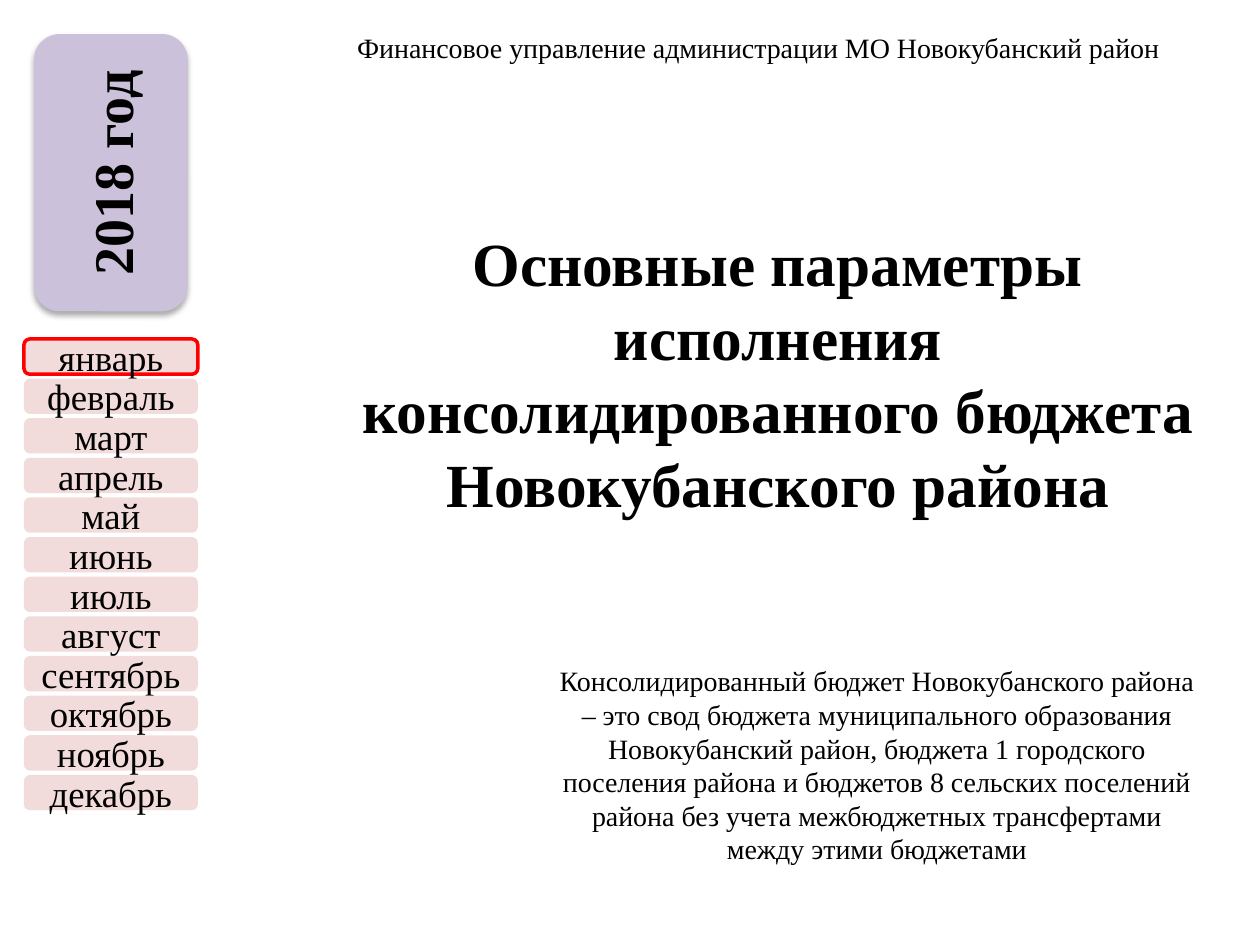
from lxml import etree
from pptx import Presentation
from pptx.dml.color import RGBColor
from pptx.enum.shapes import MSO_SHAPE
from pptx.enum.text import MSO_ANCHOR, PP_ALIGN
from pptx.oxml.ns import qn
from pptx.util import Inches, Pt

ROUNDED = MSO_SHAPE.ROUNDED_RECTANGLE
CENTER = PP_ALIGN.CENTER
MIDDLE = MSO_ANCHOR.MIDDLE
TOP = MSO_ANCHOR.TOP

FONT = "Times New Roman"
BLACK, RED, PINK, LILAC = "000000", "FF0000", "F2DCDB", "CCC1DA"

MONTHS = ["январь", "февраль", "март", "апрель", "май", "июнь",
          "июль", "август", "сентябрь", "октябрь", "ноябрь", "декабрь"]
CURRENT_MONTH = "январь"
FIRST_MONTH_TOP, LAST_MONTH_TOP = 2.69, 6.15


def color(value):
    return RGBColor.from_string(value)


def write_text(shape, text, size, bold=False, anchor=MIDDLE):
    frame = shape.text_frame
    frame.word_wrap = True
    frame.vertical_anchor = anchor
    paragraph = frame.paragraphs[0]
    paragraph.text = text
    paragraph.alignment = CENTER
    paragraph.font.name = FONT
    paragraph.font.size = Pt(size)
    paragraph.font.bold = bold
    paragraph.font.color.rgb = color(BLACK)


def add_text(slide, box, text, size, bold=False, anchor=TOP):
    shape = slide.shapes.add_textbox(*map(Inches, box))
    write_text(shape, text, size, bold, anchor)
    return shape


def add_button(slide, box, text, size, fill, bold=False, outline=None):
    shape = slide.shapes.add_shape(ROUNDED, *map(Inches, box))
    shape.shadow.inherit = False
    shape.fill.solid()
    shape.fill.fore_color.rgb = color(fill)
    if outline:
        shape.line.color.rgb = color(outline)
        shape.line.width = Pt(2)
    else:
        shape.line.fill.background()
    write_text(shape, text, size, bold)
    return shape


def add_shadow(shape):
    effects = shape._element.spPr.find(qn("a:effectLst"))
    shadow = etree.SubElement(
        effects, qn("a:outerShdw"), blurRad=str(Pt(3.5)), dist=str(Pt(2.2)),
        dir="5400000", rotWithShape="0")
    shade = etree.SubElement(shadow, qn("a:srgbClr"), val=BLACK)
    etree.SubElement(shade, qn("a:alpha"), val="32000")


def add_months(slide):
    pitch = (LAST_MONTH_TOP - FIRST_MONTH_TOP) / (len(MONTHS) - 1)
    for index, month in enumerate(MONTHS):
        box = (0.19, FIRST_MONTH_TOP + index * pitch, 1.38, 0.28)
        outline = RED if month == CURRENT_MONTH else None
        add_button(slide, box, month, 21, PINK, outline=outline)


def main():
    presentation = Presentation()
    presentation.slide_width = Inches(10)
    presentation.slide_height = Inches(7.5)
    slide = presentation.slides.add_slide(presentation.slide_layouts[6])

    # Department name, raised inside its box by the bottom inset
    department = add_text(
        slide, (2.56, 0.36, 6.92, 0.27),
        "Финансовое управление администрации МО Новокубанский район",
        16, anchor=MIDDLE)
    department.text_frame.margin_top = Inches(0)
    department.text_frame.margin_bottom = Inches(0.24)

    # Year and month navigation
    year = add_button(slide, (-0.22, 0.76, 2.2, 1.22), "2018 год", 32, LILAC, bold=True)
    year.rotation = 270
    add_shadow(year)
    add_months(slide)

    # Heading and definition
    add_text(slide, (2.7, 1.74, 6.95, 2.46),
             "Основные параметры исполнения консолидированного бюджета "
             "Новокубанского района", 35, bold=True)
    add_text(slide, (4.28, 5.22, 5.36, 1.72),
             "Консолидированный бюджет Новокубанского района – это свод бюджета "
             "муниципального образования Новокубанский район, бюджета 1 городского "
             "поселения района и бюджетов 8 сельских поселений района без учета "
             "межбюджетных трансфертами между этими бюджетами", 16)

    presentation.save("out.pptx")


if __name__ == "__main__":
    main()
